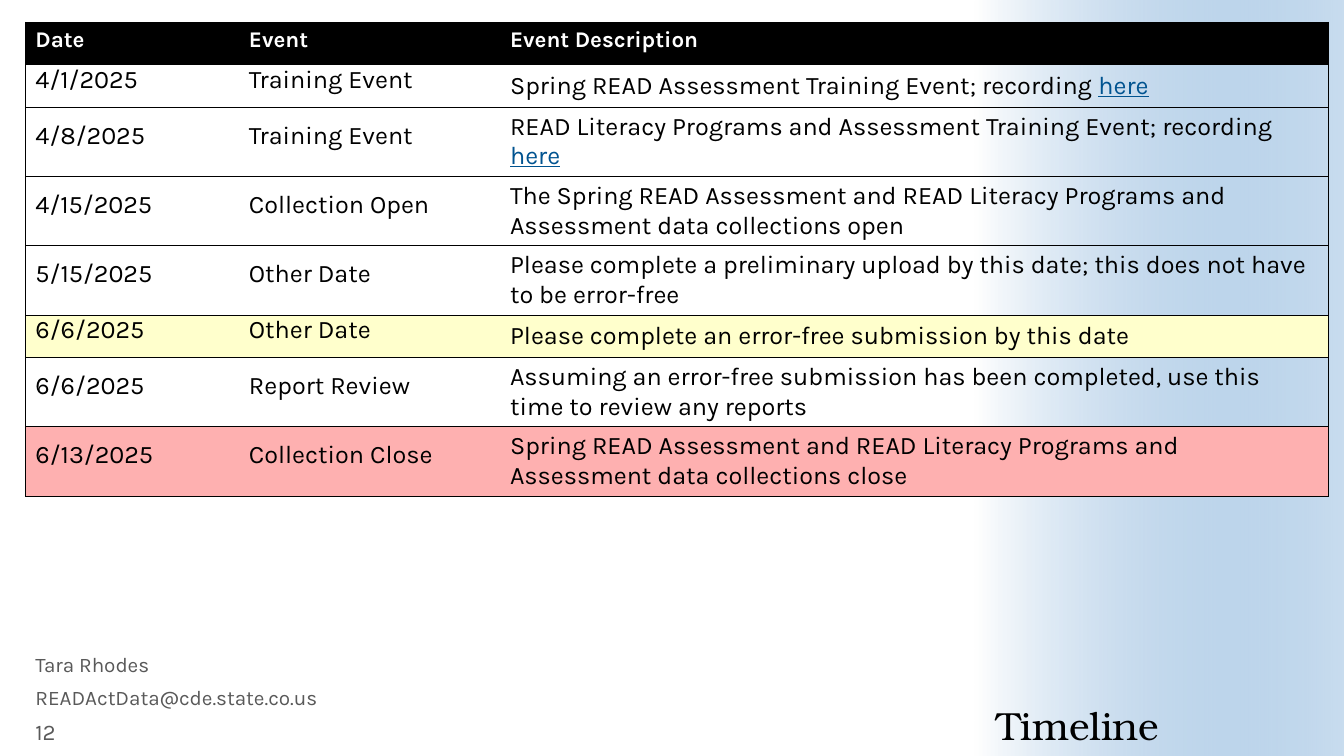
from lxml import etree
from pptx import Presentation
from pptx.dml.color import RGBColor
from pptx.enum.shapes import MSO_SHAPE
from pptx.enum.text import MSO_ANCHOR, MSO_AUTO_SIZE, PP_ALIGN
from pptx.oxml.ns import qn
from pptx.util import Cm, Pt

RECT = MSO_SHAPE.RECTANGLE
TOP, MIDDLE, BOTTOM = MSO_ANCHOR.TOP, MSO_ANCHOR.MIDDLE, MSO_ANCHOR.BOTTOM
LEFT, RIGHT = PP_ALIGN.LEFT, PP_ALIGN.RIGHT
NO_FIT = MSO_AUTO_SIZE.NONE

BLACK = RGBColor(0x00, 0x00, 0x00)
WHITE = RGBColor(0xFF, 0xFF, 0xFF)
BLUE = RGBColor(0x48, 0x8B, 0xC9)
LINK = RGBColor(0x00, 0x53, 0x90)
GRAY = RGBColor(0x59, 0x59, 0x59)
YELLOW = RGBColor(0xFF, 0xFF, 0xCC)
PINK = RGBColor(0xFE, 0xB0, 0xB0)

PLAIN_STYLE = "{2D5ABB26-0587-4C30-8999-92F81FD0307C}"
HERE = "here"

HEADS = ("Date", "Event", "Event Description")
# Date, event, description, row fill
EVENTS = (
    ("4/1/2025", "Training Event",
     "Spring READ Assessment Training Event; recording here", None),
    ("4/8/2025", "Training Event",
     "READ Literacy Programs and Assessment Training Event; recording here", None),
    ("4/15/2025", "Collection Open",
     "The Spring READ Assessment and READ Literacy Programs and "
     "Assessment data collections open", None),
    ("5/15/2025", "Other Date",
     "Please complete a preliminary upload by this date; "
     "this does not have to be error-free", None),
    ("6/6/2025", "Other Date",
     "Please complete an error-free submission by this date", YELLOW),
    ("6/6/2025", "Report Review",
     "Assuming an error-free submission has been completed, "
     "use this time to review any reports", None),
    ("6/13/2025", "Collection Close",
     "Spring READ Assessment and READ Literacy Programs and "
     "Assessment data collections close", PINK),
)


class Page:
    """Holds the style and the current slide."""

    sans, serif = "Karla", "TeX Gyre Bonum"

    def __init__(self, deck):
        self.slide = deck.slides.add_slide(deck.slide_layouts[3])
        self.shapes = self.slide.shapes

    def place(self, shape, left, top, width, height):
        box = {"left": left, "top": top, "width": width, "height": height}
        for name, value in box.items():
            setattr(shape, name, Cm(value))

    def words(self, para, text, size, color, **look):
        style = {"name": self.sans, "size": Pt(size), "bold": False, **look}
        run = para.add_run()
        run.text = text
        for name, value in style.items():
            setattr(run.font, name, value)
        run.font.color.rgb = color

    def panel(self, left, top, width, height):
        shape = self.shapes.add_shape(RECT, 0, 0, 0, 0)
        self.place(shape, left, top, width, height)
        shape.rotation = 270
        shape.shadow.inherit = False
        shape.line.fill.background()
        shape.fill.gradient()
        shape.fill.gradient_angle = 270
        for stop, color, spot in zip(shape.fill.gradient_stops, (WHITE, BLUE), (0, 1)):
            stop.color.rgb = color
            stop.position = spot
        # Fade the blue end to 30 % opacity
        tint = shape._element.spPr.findall(".//" + qn("a:srgbClr"))[-1]
        etree.SubElement(tint, qn("a:alpha"), val="30000")
        self.shapes._spTree.insert(2, shape._element)

    def title(self, text, *box):
        shape = self.shapes.title
        self.place(shape, *box)
        frame = shape.text_frame
        form = {"margin_left": 0, "margin_top": 0, "margin_right": 0,
                "margin_bottom": 0, "vertical_anchor": BOTTOM,
                "word_wrap": True, "auto_size": NO_FIT}
        for name, value in form.items():
            setattr(frame, name, value)
        para = frame.paragraphs[0]
        para.alignment, para.line_spacing = RIGHT, 0.9
        self.words(para, text, 28, BLACK, name=self.serif)

    def body(self, slot, text, *box):
        shape = self.slide.placeholders[slot]
        self.place(shape, *box)
        frame = shape.text_frame
        frame.word_wrap, frame.auto_size = True, NO_FIT
        frame.vertical_anchor = TOP
        para = frame.paragraphs[0]
        props = para._p.get_or_add_pPr()
        props.set("marL", "0")
        props.set("indent", "0")
        etree.SubElement(props, qn("a:buNone"))
        form = {"alignment": LEFT, "line_spacing": 0.8, "space_before": Pt(0)}
        for name, value in form.items():
            setattr(para, name, value)
        self.words(para, text, 14.8, GRAY)

    def label(self, text, *box):
        shape = self.shapes.add_textbox(0, 0, 0, 0)
        self.place(shape, *box)
        frame = shape.text_frame
        frame.word_wrap, frame.vertical_anchor = True, MIDDLE
        self.words(frame.paragraphs[0], text, 16, GRAY)

    def edges(self, cell, sides):
        props = cell._tc.get_or_add_tcPr()
        for spot, side in enumerate("LRTB"):
            line = etree.Element(qn("a:ln" + side), w=str(Pt(0.5)))
            if side in sides:
                fill = etree.SubElement(line, qn("a:solidFill"))
                etree.SubElement(fill, qn("a:srgbClr"), val=str(BLACK))
            else:
                etree.SubElement(line, qn("a:noFill"))
            props.insert(spot, line)

    def cell(self, cell, text, col, fill, head):
        cell.vertical_anchor = TOP if head else MIDDLE
        if fill is None:
            cell.fill.background()
        else:
            cell.fill.solid()
            cell.fill.fore_color.rgb = fill
        self.edges(cell, "TB" + ("L", "", "R")[col])
        para = cell.text_frame.paragraphs[0]
        if head:
            self.words(para, text, 16, WHITE, bold=True)
            return
        if col < 2:
            para.line_spacing = Pt(12.8)
        linked = text.endswith(HERE)
        self.words(para, text.removesuffix(HERE), 18, BLACK)
        if linked:
            self.words(para, HERE, 18, LINK, underline=True)

    def table(self, left, top, widths, heights):
        grid = self.shapes.add_table(
            len(heights), len(widths), Cm(left), Cm(top),
            Cm(sum(widths)), Cm(sum(heights))).table
        grid.horz_banding = False
        grid._tbl.tblPr.find(qn("a:tableStyleId")).text = PLAIN_STYLE
        for col, width in zip(grid.columns, widths):
            col.width = Cm(width)
        for row, height in zip(grid.rows, heights):
            row.height = Cm(height)
        for r, (*texts, fill) in enumerate(((*HEADS, BLACK), *EVENTS)):
            for c, text in enumerate(texts):
                self.cell(grid.cell(r, c), text, c, fill, r == 0)


def main():
    deck = Presentation()
    deck.slide_width, deck.slide_height = Cm(33.87), Cm(19.05)
    page = Page(deck)

    # Fading panel on the right
    page.panel(19.69, 4.88, 19.05, 9.3)

    # Title and schedule
    page.title("Timeline", 10.82, 16.38, 18.39, 2.49)
    heights = [1.07] * 8
    heights[3] = 1.19
    page.table(0.64, 0.56, (5.38, 6.58, 20.88), heights)

    # Contact and page number
    page.body(1, "Tara Rhodes", 0.64, 16.43, 9.88, 0.79)
    page.body(2, "READActData@cde.state.co.us", 0.64, 17.25, 9.88, 0.79)
    page.label("12", 0.64, 18.03, 2.16, 0.79)

    deck.save("out.pptx")


if __name__ == "__main__":
    main()
